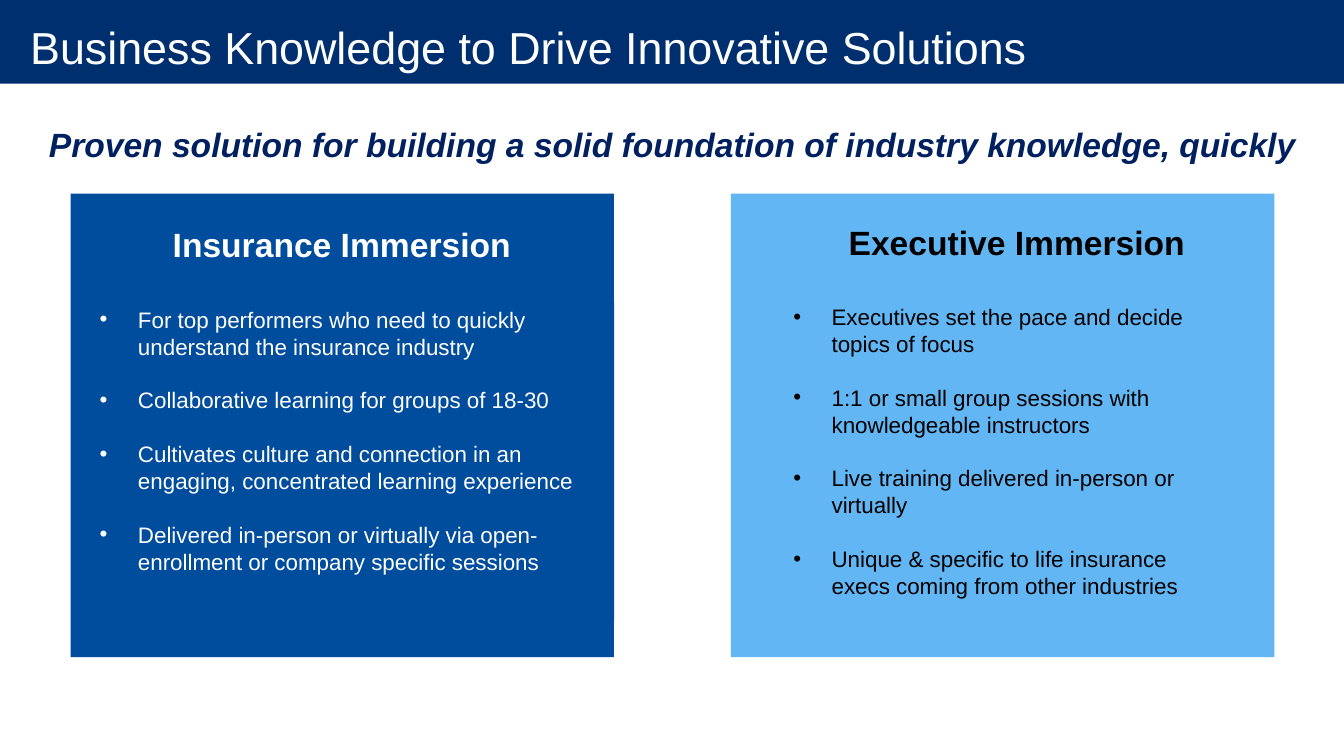
from lxml.etree import SubElement as Sub
from pptx import Presentation as Deck
from pptx.dml.color import RGBColor as Color
from pptx.enum.shapes import MSO_SHAPE as Shape
from pptx.enum.text import MSO_ANCHOR as Anchor, PP_ALIGN as Align
from pptx.oxml.ns import qn
from pptx.util import Inches as Inch, Pt

NAVY = Color(0x00, 0x2F, 0x70)
INK = Color(0x00, 0x20, 0x60)
BLUE = Color(0x00, 0x4C, 0x9D)
SKY = Color(0x62, 0xB6, 0xF3)
WHITE = Color(0xFF, 0xFF, 0xFF)
BLACK = Color(0x00, 0x00, 0x00)

PANELS = [
    dict(
        left=54.39, fill=SKY, ink=BLACK,
        title="Executive Immersion", head=(59.34, 28.67, 32.63, 7.73),
        body=(58.29, 39.47, 32.63, 40.8),
        items=[
            "Executives set the pace and decide topics of focus",
            "1:1 or small group sessions with knowledgeable instructors",
            "Live training delivered in-person or virtually",
            "Unique & specific to life insurance execs coming from other industries",
        ],
    ),
    dict(
        left=5.25, fill=BLUE, ink=WHITE,
        title="Insurance Immersion", head=(9.15, 28.93, 32.56, 7.6),
        body=(6.68, 39.8, 39.01, 42.4),
        items=[
            "For top performers who need to quickly understand the insurance industry",
            "Collaborative learning for groups of 18-30",
            "Cultivates culture and connection in an engaging, concentrated learning experience",
            "Delivered in-person or virtually via open-enrollment or company specific sessions",
        ],
    ),
]


def write(frame, lines, size=16, color=BLACK, bold=False, italic=False,
          align=Align.LEFT, dots=False):
    frame.word_wrap = True
    for i, line in enumerate(lines):
        para = frame.paragraphs[0] if i == 0 else frame.add_paragraph()
        para.alignment = align
        if dots:
            para.line_spacing = Pt(1.2 * size)
            para.space_before = Pt(1.2 * size if i else 0)
            props = para._p.get_or_add_pPr()
            props.set("marL", str(Inch(0.38)))
            props.set("indent", str(-Inch(0.38)))
            Sub(props, qn("a:buFont")).set("typeface", "Arial")
            Sub(props, qn("a:buChar")).set("char", "•")
        run = para.add_run()
        run.text = line
        font = run.font
        font.name, font.size = "Arial", Pt(size)
        font.bold, font.italic = bold, italic
        font.color.rgb = color


class Page:
    """Draw on one slide, with places given in percent of its size."""

    def __init__(self, deck):
        self.wide, self.high = deck.slide_width, deck.slide_height
        self.shapes = deck.slides.add_slide(deck.slide_layouts[6]).shapes

    def place(self, x, y, w, h):
        sides = (self.wide, self.high) * 2
        return [round(part * side / 100) for part, side in zip((x, y, w, h), sides)]

    def block(self, spot, fill):
        rect = self.shapes.add_shape(Shape.RECTANGLE, *self.place(*spot))
        rect.shadow.inherit = False
        rect.fill.solid()
        rect.fill.fore_color.rgb = fill
        rect.line.fill.background()
        frame = rect.text_frame
        frame.vertical_anchor = Anchor.TOP
        return frame

    def text(self, spot, line, **style):
        frame = self.shapes.add_textbox(*self.place(*spot)).text_frame
        write(frame, [line], **style)
        return frame

    def panel(self, left, fill, ink, title, head, body, items):
        self.block((left, 25.6, 40.43, 61.33), fill)
        write(self.block(head, fill), [title], size=24, color=ink,
              bold=True, align=Align.CENTER)
        write(self.block(body, fill), items, color=ink, dots=True)


def main():
    deck = Deck()
    deck.slide_width, deck.slide_height = Inch(13.33), Inch(7.5)
    page = Page(deck)
    page.block((0, 0, 100, 11.07), NAVY)
    for panel in PANELS:
        page.panel(**panel)
    title = page.text((0, 0, 100, 12.4),
                      "Business Knowledge to Drive Innovative Solutions",
                      size=32, color=WHITE)
    title.vertical_anchor = Anchor.MIDDLE
    title.margin_left, title.margin_right = Inch(0.3), Inch(0.2)
    title.margin_top = title.margin_bottom = 0
    page.text((2.63, 15.73, 94.82, 6.67),
              "Proven solution for building a solid foundation of industry knowledge, quickly",
              size=24, color=INK, bold=True, italic=True, align=Align.CENTER)
    deck.save("out.pptx")


if __name__ == "__main__":
    main()
